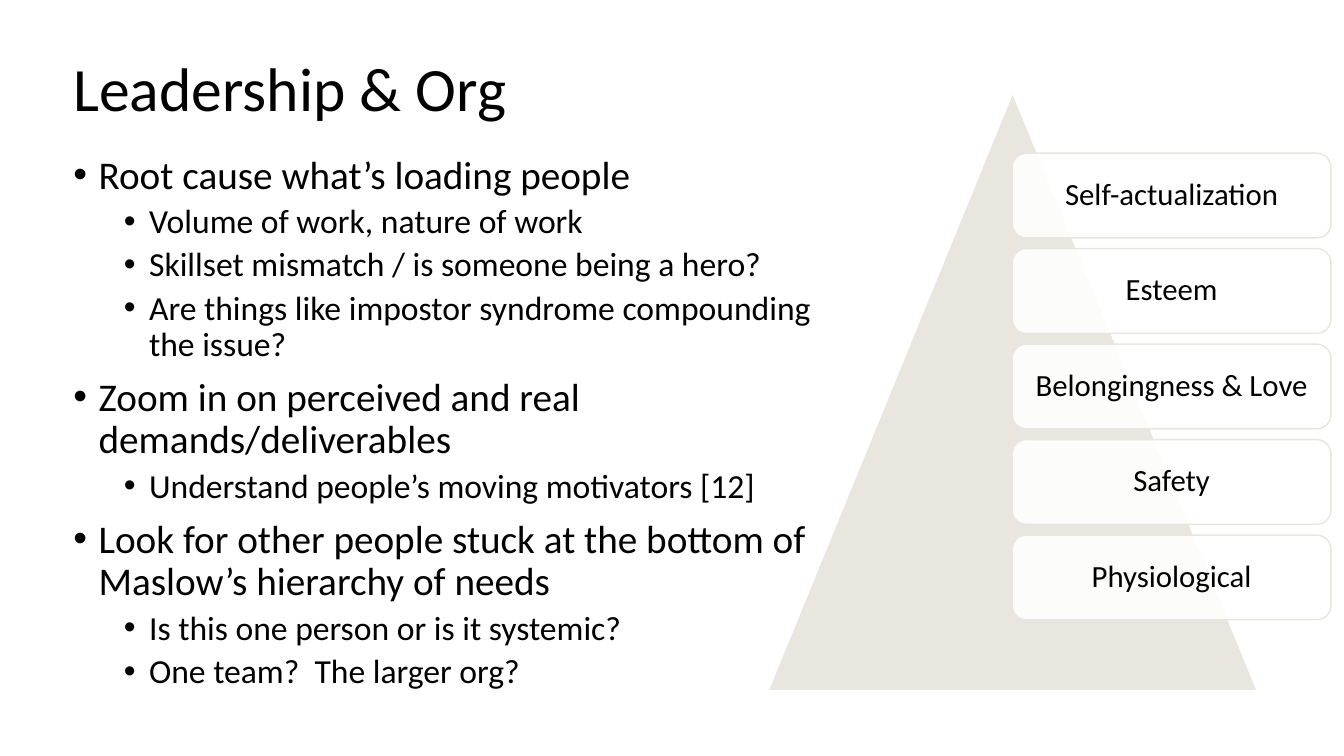
from lxml import etree
from pptx import Presentation
from pptx.dml.color import RGBColor
from pptx.enum.shapes import MSO_SHAPE
from pptx.enum.text import MSO_ANCHOR, PP_ALIGN
from pptx.oxml.ns import qn
from pptx.util import Inches, Pt

TRIANGLE = MSO_SHAPE.ISOSCELES_TRIANGLE
CARD = MSO_SHAPE.ROUNDED_RECTANGLE
MIDDLE, TOP = MSO_ANCHOR.MIDDLE, MSO_ANCHOR.TOP
LEFT, CENTER = PP_ALIGN.LEFT, PP_ALIGN.CENTER

SLIDE_WIDTH, SLIDE_HEIGHT = Inches(13.33), Inches(7.5)
FONT = "Calibri"
COLORS = {"text": "000000", "white": "FFFFFF", "sand": "E9E6DF"}

# Boxes are left, top, width, height in percent of the slide
TITLE_BOX = (4.73, 5.33, 91.37, 13.47)
BODY_BOX = (4.73, 19.87, 56.41, 78.53)
PYRAMID_BOX = (57.16, 12.27, 36.38, 79.07)
CARD_LEFT, CARD_TOP, CARD_WIDTH, CARD_HEIGHT = 75.32, 20.27, 23.71, 11.2
CARD_PITCH = 12.63

OUTLINE_FORMATS = [
    {"size": 28, "before": 10, "margin": 0.25},
    {"size": 24, "before": 5, "margin": 0.75},
]
HANGING_INDENT = 0.25

OUTLINE = [
    (0, "Root cause what’s loading people"),
    (1, "Volume of work, nature of work"),
    (1, "Skillset mismatch / is someone being a hero?"),
    (1, "Are things like impostor syndrome compounding the issue?"),
    (0, "Zoom in on perceived and real demands/deliverables"),
    (1, "Understand people’s moving motivators [12]"),
    (0, "Look for other people stuck at the bottom of Maslow’s hierarchy of needs"),
    (1, "Is this one person or is it systemic?"),
    (1, "One team?  The larger org?"),
]
NEEDS = ["Self-actualization", "Esteem", "Belongingness & Love", "Safety", "Physiological"]


def color(name):
    return RGBColor.from_string(COLORS[name])


def place(box):
    """Turn a box in percent of the slide into lengths."""
    left, top, width, height = (share / 100 for share in box)
    return (int(left * SLIDE_WIDTH), int(top * SLIDE_HEIGHT),
            int(width * SLIDE_WIDTH), int(height * SLIDE_HEIGHT))


def set_all(target, values):
    for name, value in values.items():
        setattr(target, name, value)


def write(paragraph, text, size, before=0, align=LEFT):
    set_all(paragraph, {"text": text, "line_spacing": 0.9,
                        "space_before": Pt(before), "alignment": align})
    set_all(paragraph.font, {"name": FONT, "size": Pt(size)})
    paragraph.font.color.rgb = color("text")


def add_bullet(paragraph, margin):
    properties = paragraph._p.get_or_add_pPr()
    properties.set("marL", str(Inches(margin)))
    properties.set("indent", str(-Inches(HANGING_INDENT)))
    etree.SubElement(properties, qn("a:buFont")).set("typeface", "Arial")
    etree.SubElement(properties, qn("a:buChar")).set("char", "•")


def add_text_frame(slide, box, anchor):
    frame = slide.shapes.add_textbox(*place(box)).text_frame
    set_all(frame, {"word_wrap": True, "vertical_anchor": anchor})
    return frame


def add_outline(slide, box, entries):
    frame = add_text_frame(slide, box, TOP)
    for index, (level, text) in enumerate(entries):
        paragraph = frame.add_paragraph() if index else frame.paragraphs[0]
        style = OUTLINE_FORMATS[level]
        paragraph.level = level
        write(paragraph, text, style["size"], style["before"])
        add_bullet(paragraph, style["margin"])


def add_panel(slide, kind, box, fill, line):
    panel = slide.shapes.add_shape(kind, *place(box))
    panel.shadow.inherit = False
    panel.fill.solid()
    panel.fill.fore_color.rgb = color(fill)
    panel.line.color.rgb = color(line)
    panel.line.width = Pt(1)
    return panel


def set_opacity(panel, percent):
    fill_color = panel._element.spPr.find(qn("a:solidFill"))[0]
    etree.SubElement(fill_color, qn("a:alpha")).set("val", str(percent * 1000))


def add_need(slide, row, need):
    box = (CARD_LEFT, CARD_TOP + row * CARD_PITCH, CARD_WIDTH, CARD_HEIGHT)
    card = add_panel(slide, CARD, box, "white", "sand")
    set_opacity(card, 90)
    set_all(card.text_frame, {"word_wrap": True, "vertical_anchor": MIDDLE})
    write(card.text_frame.paragraphs[0], need, 22, align=CENTER)


def main():
    deck = Presentation()
    set_all(deck, {"slide_width": SLIDE_WIDTH, "slide_height": SLIDE_HEIGHT})
    slide = deck.slides.add_slide(deck.slide_layouts[6])

    title = add_text_frame(slide, TITLE_BOX, MIDDLE)
    write(title.paragraphs[0], "Leadership & Org", 44)
    add_outline(slide, BODY_BOX, OUTLINE)
    add_panel(slide, TRIANGLE, PYRAMID_BOX, "sand", "white")
    for row, need in enumerate(NEEDS):
        add_need(slide, row, need)

    deck.save("out.pptx")


if __name__ == "__main__":
    main()
